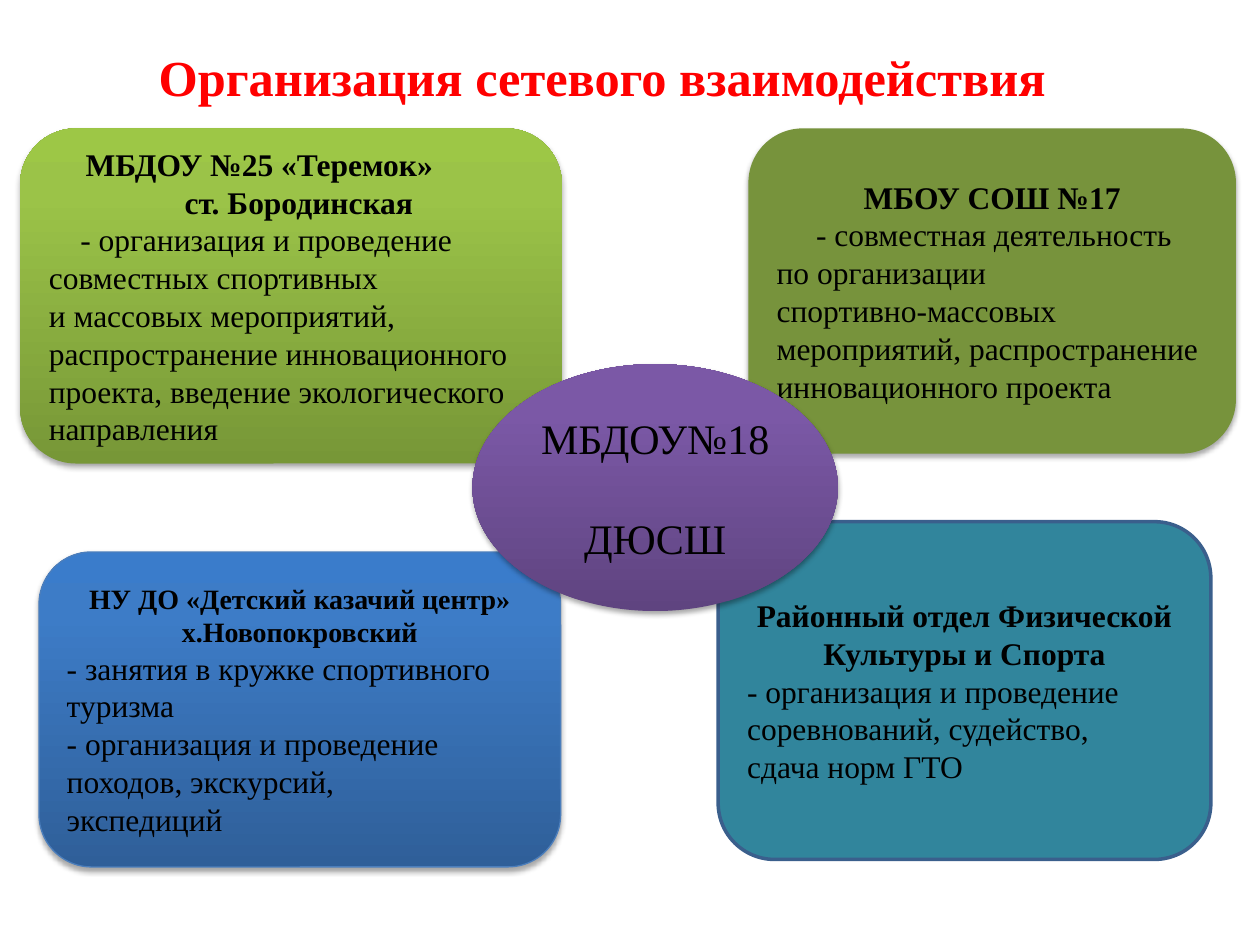
import pptx
import pptx.util
import pptx.dml.color
import pptx.enum.shapes
import pptx.enum.text
import pptx.oxml
import pptx.oxml.ns

Pt = pptx.util.Pt
ALIGN = pptx.enum.text.PP_ALIGN
MIDDLE = pptx.enum.text.MSO_ANCHOR.MIDDLE
SHAPE = pptx.enum.shapes.MSO_SHAPE
FONT = "Times New Roman"
COLORS = {
    "title": "FF0000",
    "text": "000000",
    "lime": ("779737", "9BC348", "9DC746"),
    "olive": "77933C",
    "blue": ("2F5F99", "3D7CC7", "3A7CCB"),
    "blue_line": "4B7EBC",
    "teal": "31859C",
    "teal_line": "3A5F8C",
    "purple": ("5F4480", "7B58A6", "7C57A8"),
}
NAMESPACE = pptx.oxml.ns.nsdecls("a")


def rgb(name):
    return pptx.dml.color.RGBColor.from_string(COLORS[name])


def paint(shape, name):
    if isinstance(COLORS[name], str):
        shape.fill.solid()
        shape.fill.fore_color.rgb = rgb(name)
        return
    shape.fill.gradient()
    shape.fill.gradient_angle = 90
    stops = shape._element.spPr.find(".//" + pptx.oxml.ns.qn("a:gsLst"))
    for stop in list(stops):
        stops.remove(stop)
    for position, color in zip((0, 80000, 100000), COLORS[name]):
        stops.append(pptx.oxml.parse_xml(
            f'<a:gs {NAMESPACE} pos="{position}"><a:srgbClr val="{color}"/></a:gs>'))


def add_shadow(shape):
    effects = shape._element.spPr.find(pptx.oxml.ns.qn("a:effectLst"))
    effects.append(pptx.oxml.parse_xml(
        f'<a:outerShdw {NAMESPACE} blurRad="{Pt(3.1)}" dist="{Pt(1.8)}" dir="5400000" rotWithShape="0">'
        '<a:srgbClr val="000000"><a:alpha val="35000"/></a:srgbClr></a:outerShdw>'))


def add_panel(page, kind, box, fill, line=None, width=0, shadow=True):
    shape = page.shapes.add_shape(kind, *map(Pt, box))
    shape.shadow.inherit = False
    paint(shape, fill)
    if line:
        shape.line.color.rgb = rgb(line)
        shape.line.width = Pt(width)
    else:
        shape.line.fill.background()
    if shadow:
        add_shadow(shape)
    shape.text_frame.word_wrap = True
    shape.text_frame.vertical_anchor = MIDDLE
    return shape


def write(frame, index, text, size=18, bold=False, align=ALIGN.LEFT, left=0, first=0, before=0):
    para = frame.paragraphs[0] if index == 0 else frame.add_paragraph()
    para.text = text
    para.alignment = align
    para.space_before = Pt(before)
    properties = para._p.get_or_add_pPr()
    properties.set("marL", str(Pt(left)))
    properties.set("indent", str(Pt(first)))
    for span in para.runs:
        span.font.name = FONT
        span.font.size = Pt(size)
        span.font.bold = bold
        span.font.color.rgb = rgb("text")


def add_title(page, box, text):
    title = page.shapes.title
    title.left, title.top, title.width, title.height = map(Pt, box)
    frame = title.text_frame
    frame.text = text
    frame.vertical_anchor = MIDDLE
    para = frame.paragraphs[0]
    para.alignment = ALIGN.CENTER
    font = para.runs[0].font
    font.name, font.size, font.bold = FONT, Pt(28.8), True
    font.color.rgb = rgb("title")


def add_partner(page, box, style, paragraphs):
    frame = add_panel(page, SHAPE.ROUNDED_RECTANGLE, box, **style).text_frame
    for index, (text, options) in enumerate(paragraphs):
        write(frame, index, text, **options)


def add_center(page, box, lines):
    frame = add_panel(page, SHAPE.OVAL, box, "purple").text_frame
    for index, text in enumerate(lines):
        write(frame, index, text, size=24, align=ALIGN.CENTER, before=28 * index)


HEADING = {"bold": True, "align": ALIGN.CENTER}
PARTNERS = [
    ((11.5, 73.4, 309.6, 191.5), {"fill": "lime"}, [
        ("МБДОУ №25 «Теремок»", {"bold": True, "left": 21}),
        ("ст. Бородинская", {**HEADING, "left": 9}),
        ("- организация и проведение совместных спортивных\vи массовых мероприятий,", {"first": 18}),
        ("распространение инновационного проекта, введение экологического направления", {}),
    ]),
    ((427.7, 73.4, 278.6, 185.8), {"fill": "olive"}, [
        ("МБОУ СОШ №17", HEADING),
        ("- совместная деятельность по организации", {"first": 22.5}),
        ("спортивно-массовых мероприятий, распространение инновационного проекта", {}),
    ]),
    ((22.3, 315.4, 298.1, 180), {"fill": "blue", "line": "blue_line", "width": 0.75}, [
        ("НУ ДО «Детский казачий центр» х.Новопокровский", {**HEADING, "size": 16}),
        ("- занятия в кружке спортивного туризма", {}),
        ("- организация и проведение походов, экскурсий,", {}),
        ("экспедиций", {}),
    ]),
    ((410.4, 298.1, 281.5, 193), {"fill": "teal", "line": "teal_line", "width": 2, "shadow": False}, [
        ("Районный отдел Физической Культуры и Спорта", HEADING),
        ("- организация и проведение соревнований, судейство,\vсдача норм ГТО", {}),
    ]),
]


def main():
    deck = pptx.Presentation()
    deck.slide_width, deck.slide_height = Pt(720), Pt(540)
    page = deck.slides.add_slide(deck.slide_layouts[5])
    add_title(page, (20.2, 20.9, 648, 45.4), "Организация сетевого взаимодействия")
    for box, style, paragraphs in PARTNERS:
        add_partner(page, box, style, paragraphs)
    add_center(page, (270, 208.1, 208.8, 141.1), ("МБДОУ№18", "ДЮСШ"))
    deck.save("out.pptx")


if __name__ == "__main__":
    main()
